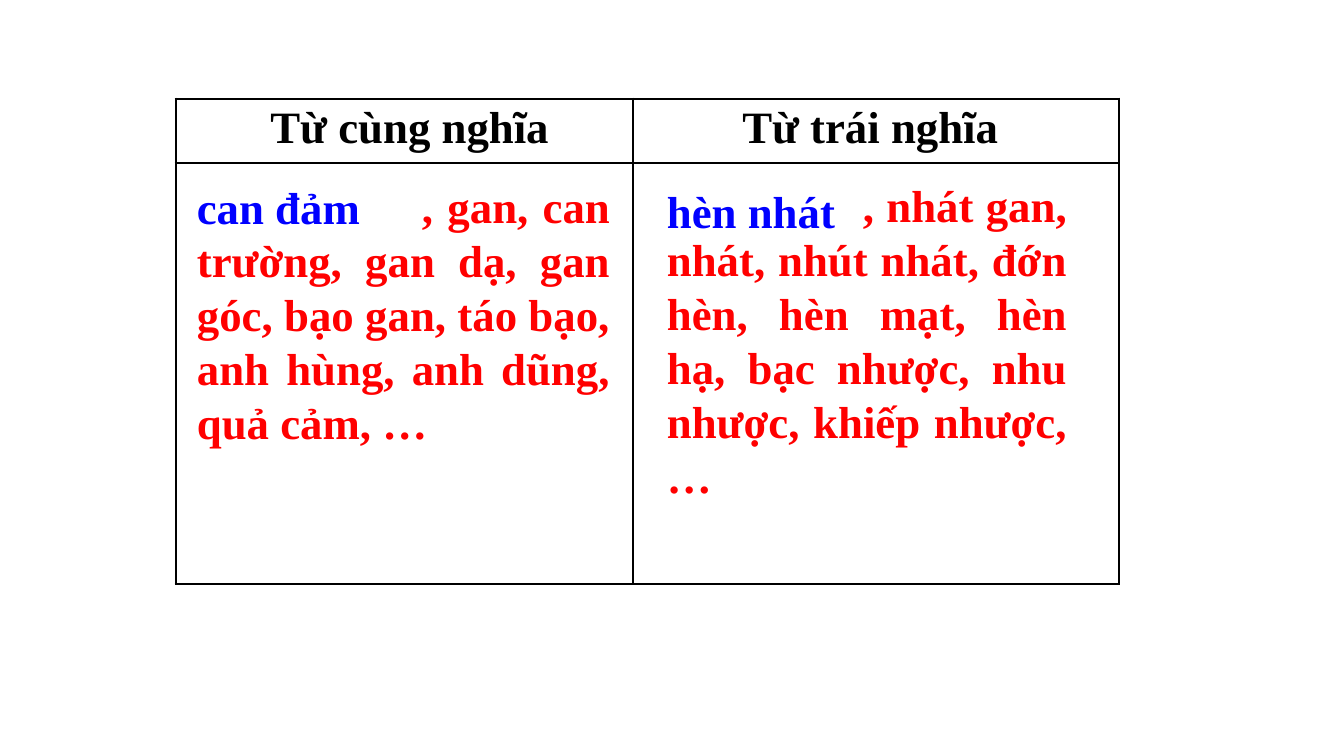
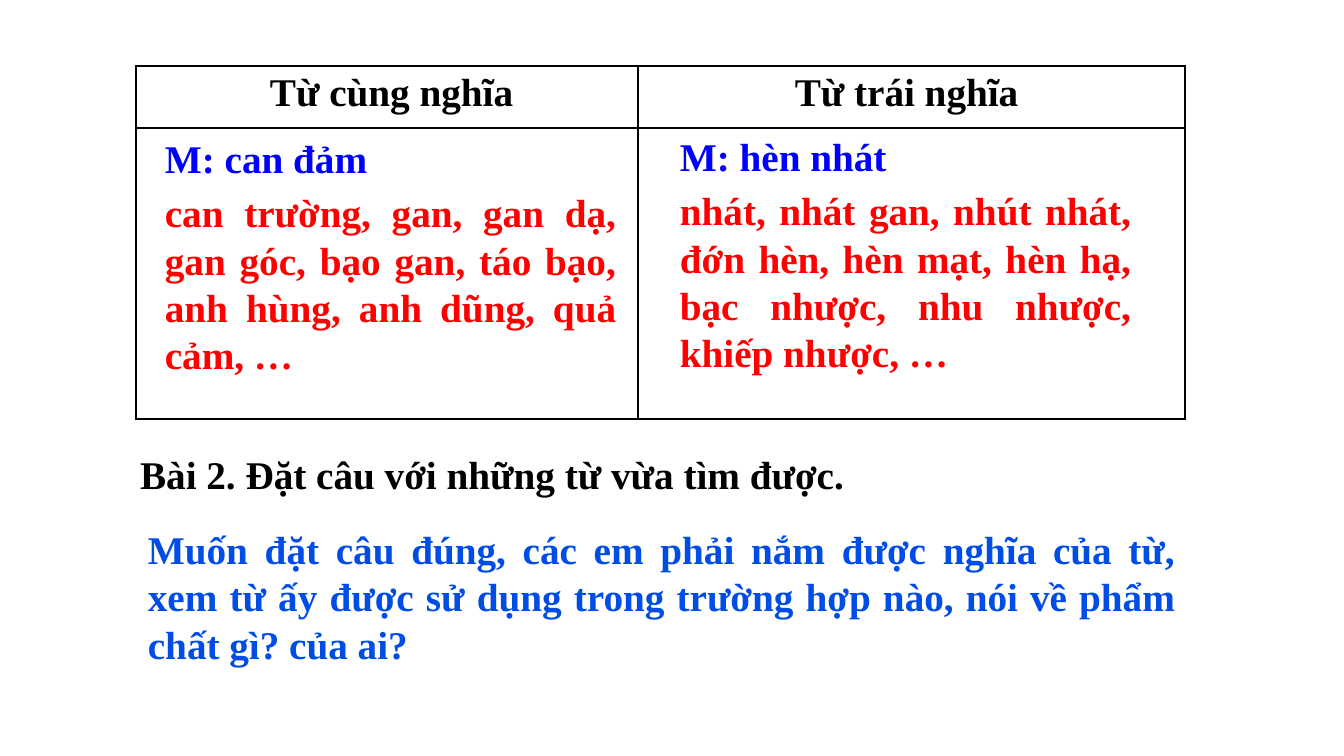
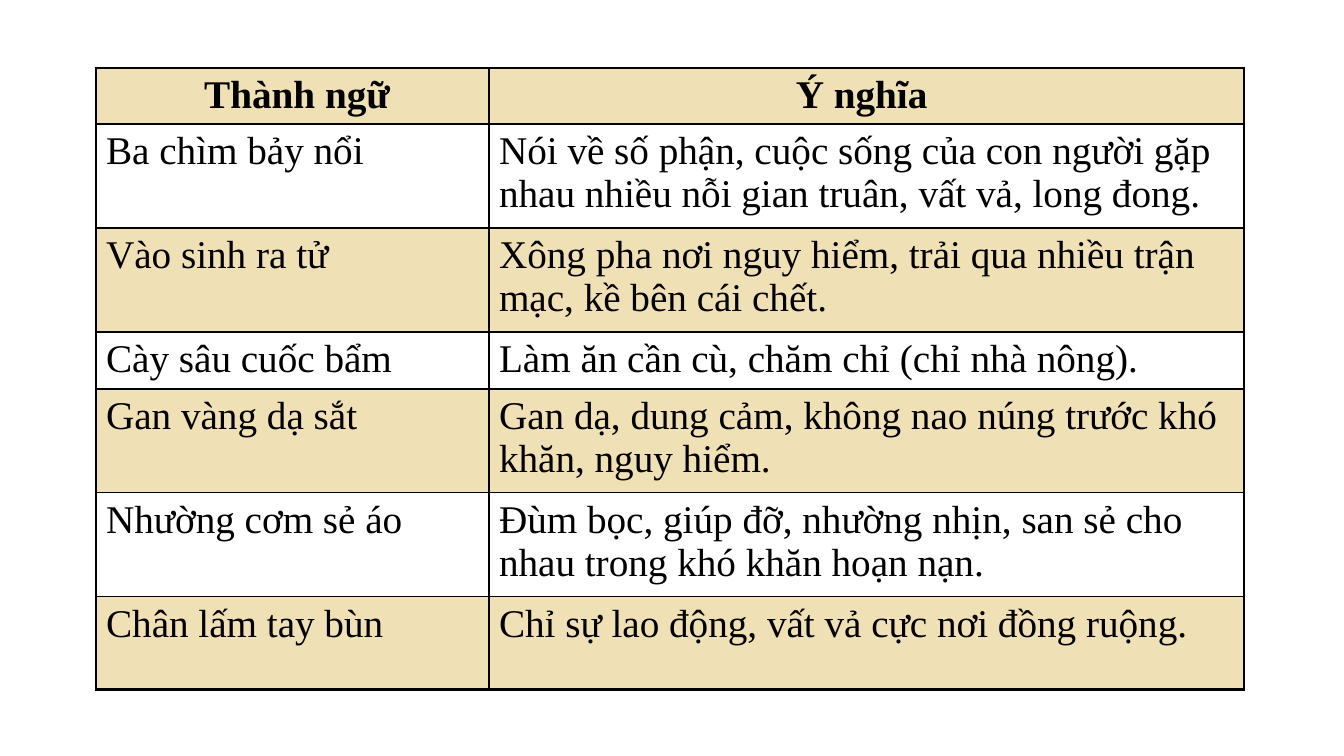
from lxml import etree
from pptx import Presentation
from pptx.dml.color import RGBColor
from pptx.enum import text
from pptx.oxml.ns import qn
from pptx.util import Pt

PX = 914400 / 100.8  # EMU in one px
FONT = "Times New Roman"
COLORS = {"black": "000000", "red": "FF0000", "blue": "0000FF",
          "advice": "004DE6", "sand": "F0E0B5"}
BOX_LEADING, CELL_LEADING = 1.21, 1.11
OUTER, INNER = 2.25, 1  # table rules, pt
LEFT, CENTER, JUSTIFY = (text.PP_ALIGN.LEFT, text.PP_ALIGN.CENTER,
                         text.PP_ALIGN.JUSTIFY)
TITLE_ONLY, BLANK = 5, 6

# Content
WORD_HEADS = [" Từ cùng nghĩa", "Từ trái nghĩa "]
IDIOMS = [
    (" Thành ngữ", "Ý nghĩa "),
    ("Ba chìm bảy nổi", "Nói về số phận, cuộc sống của con người gặp nhau "
     "nhiều nỗi gian truân, vất vả, long đong."),
    ("Vào sinh ra tử",
     "Xông pha nơi nguy hiểm, trải qua nhiều trận mạc, kề bên cái chết."),
    ("Cày sâu cuốc bẩm", "Làm ăn cần cù, chăm chỉ (chỉ nhà nông)."),
    ("Gan vàng dạ sắt",
     "Gan dạ, dung cảm, không nao núng trước khó khăn, nguy hiểm."),
    ("Nhường cơm sẻ áo",
     "Đùm bọc, giúp đỡ, nhường nhịn, san sẻ cho nhau trong khó khăn hoạn nạn."),
    ("Chân lấm tay bùn", "Chỉ sự lao động, vất vả cực nơi đồng ruộng."),
]
# Boxes: text, (left, top, width, height), colour, alignment, first-line indent
SLIDES = [
    {"size": 32, "at": (176, 99), "cols": [457, 486], "rows": [64, 421],
     "cells": [WORD_HEADS, ["", ""]],
     "boxes": [
         (", gan, can trường, gan dạ, gan góc, bạo gan, táo bạo, anh hùng, "
          "anh dũng, quả cảm, …", (187, 173, 433, 281), "red", JUSTIFY, 225),
         (", nhát gan, nhát, nhút nhát, đớn hèn, hèn mạt, hèn hạ, bạc nhược, "
          "nhu nhược, khiếp nhược, …",
          (657, 172, 420, 336), "red", JUSTIFY, 196),
         ("can đảm", (187, 174, 222, 64), "blue", LEFT, 0),
         ("hèn nhát", (657, 178, 222, 64), "blue", LEFT, 0)]},
    {"size": 28, "at": (136, 66), "cols": [502, 547], "rows": [62, 291],
     "cells": [WORD_HEADS, ["", ""]],
     "title": ("Bài 2. Đặt câu với những từ vừa tìm được.",
               (130, 445, 962, 57), "black", JUSTIFY, 0),
     "boxes": [
         ("can trường, gan, gan dạ, gan góc, bạo gan, táo bạo, anh hùng, "
          "anh dũng, quả cảm, …", (155, 183, 471, 201), "red", JUSTIFY, 0),
         ("nhát, nhát gan, nhút nhát, đớn hèn, hèn mạt, hèn hạ, bạc nhược, "
          "nhu nhược, khiếp nhược, …",
          (670, 181, 471, 201), "red", JUSTIFY, 0),
         ("M: can đảm", (155, 129, 240, 57), "blue", LEFT, 0),
         ("M: hèn nhát", (670, 127, 240, 57), "blue", LEFT, 0),
         ("Muốn đặt câu đúng, các em phải nắm được nghĩa của từ, xem từ ấy "
          "được sử dụng trong trường hợp nào, nói về phẩm chất gì? của ai?",
          (138, 520, 1047, 152), "advice", JUSTIFY, 0)]},
    {"size": 28, "at": (96, 68), "cols": [393, 755],
     "rows": [56, 104, 104, 57, 104, 104, 93],
     "cells": IDIOMS, "banded": True, "boxes": []},
]


def px(n):
    return round(n * PX)


def write(tf, words, size, color, align, leading, bold=True):
    tf.text = words
    p = tf.paragraphs[0]
    p.alignment = align
    p.line_spacing = Pt(round(size * leading, 1))
    p.space_before = Pt(0)
    for r in p.runs:
        r.font.name, r.font.size, r.font.bold = FONT, Pt(size), bold
        r.font.color.rgb = RGBColor.from_string(COLORS[color])
    return p


def fill_box(sp, box, size):
    words, at, color, align, indent = box
    sp.left, sp.top, sp.width, sp.height = map(px, at)
    tf = sp.text_frame
    p = write(tf, words, size, color, align, BOX_LEADING)
    tf.word_wrap = True
    tf.auto_size = text.MSO_AUTO_SIZE.NONE
    tf.vertical_anchor = text.MSO_ANCHOR.TOP
    if indent:
        p._p.get_or_add_pPr().set("indent", str(px(indent)))


def add_borders(cell, widths):
    tcPr = cell._tc.get_or_add_tcPr()
    for i, (side, width) in enumerate(zip("LRTB", widths)):
        ln = etree.Element(qn(f"a:ln{side}"), w=str(Pt(width)))
        solid = etree.SubElement(ln, qn("a:solidFill"))
        etree.SubElement(solid, qn("a:srgbClr"), val=COLORS["black"])
        tcPr.insert(i, ln)


def add_grid(slide, data):
    rows, cols = data["rows"], data["cols"]
    table = slide.shapes.add_table(
        len(rows), len(cols), *map(px, data["at"]),
        px(sum(cols)), px(sum(rows))).table
    table.first_row = table.horz_banding = False
    for col, width in zip(table.columns, cols):
        col.width = px(width)
    for i, height in enumerate(rows):
        table.rows[i].height = px(height)
        for j, words in enumerate(data["cells"][i]):
            cell = table.cell(i, j)
            head = i == 0
            if words:
                write(cell.text_frame, words, data["size"], "black",
                      CENTER if head else LEFT, CELL_LEADING, head)
            if data.get("banded") and i % 2 == 0:
                cell.fill.solid()
                cell.fill.fore_color.rgb = RGBColor.from_string(COLORS["sand"])
            else:
                cell.fill.background()
            edges = (j == 0, j == len(cols) - 1, head, i == len(rows) - 1)
            add_borders(cell, [OUTER if edge else INNER for edge in edges])


def main():
    prs = Presentation()
    prs.slide_width, prs.slide_height = px(1344), px(756)
    for data in SLIDES:
        layout = TITLE_ONLY if "title" in data else BLANK
        slide = prs.slides.add_slide(prs.slide_layouts[layout])
        add_grid(slide, data)
        if "title" in data:
            fill_box(slide.shapes.title, data["title"], data["size"])
        for box in data["boxes"]:
            sp = slide.shapes.add_textbox(0, 0, 0, 0)
            fill_box(sp, box, data["size"])
    prs.save("out.pptx")


if __name__ == "__main__":
    main()
